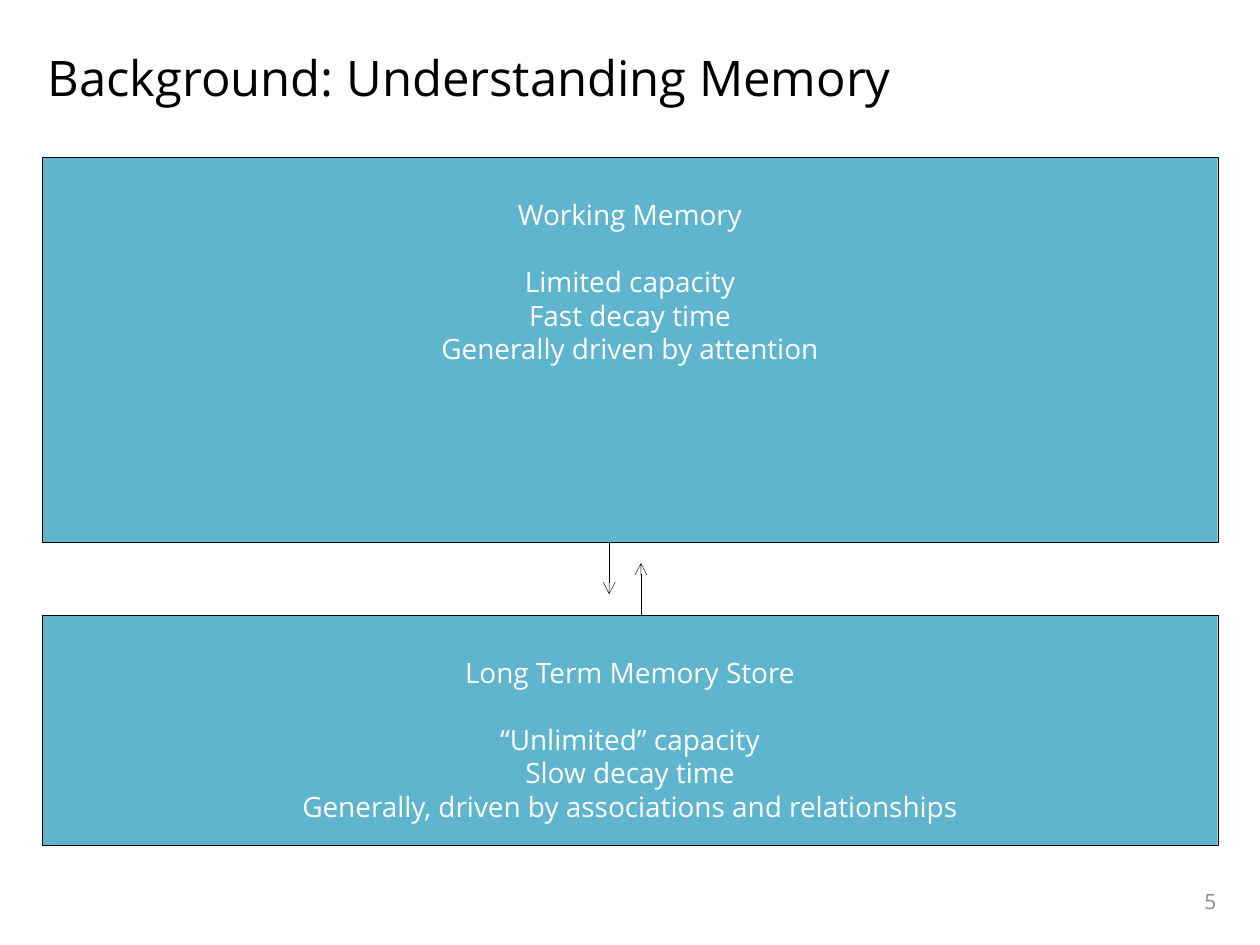
"""Build the slide on working memory and the long term memory store."""
import lxml.etree
import pptx
import pptx.dml.color
import pptx.enum.shapes
import pptx.enum.text
import pptx.oxml.ns
import pptx.util

Cm = pptx.util.Cm
Pt = pptx.util.Pt
ALIGN = pptx.enum.text.PP_ALIGN
ANCHOR = pptx.enum.text.MSO_ANCHOR
FONT = "Open Sans"
LINE_HEIGHT = 19.15
COLOURS = {"ink": "000000", "store": "5FB5CD", "label": "FFFFFF", "number": "8C8C8C"}


def colour(name):
    """Return the named colour."""
    return pptx.dml.color.RGBColor.from_string(COLOURS[name])


def add_span(para, text, size, ink, align):
    """Add one formatted run to a paragraph."""
    para.alignment = align
    span = para.add_run()
    span.text = text
    span.font.name = FONT
    span.font.size = Pt(size)
    span.font.color.rgb = colour(ink)


def add_text(page, box, text, size, ink, align, anchor):
    """Place a single line of text in the given box."""
    frame = page.shapes.add_textbox(*map(Cm, box)).text_frame
    frame.word_wrap = True
    frame.vertical_anchor = anchor
    add_span(frame.paragraphs[0], text, size, ink, align)


def add_store(page, box, heading, traits):
    """Draw a memory store with its heading and traits."""
    store = page.shapes.add_shape(
        pptx.enum.shapes.MSO_SHAPE.RECTANGLE, *map(Cm, box))
    store.shadow.inherit = False
    store.fill.solid()
    store.fill.fore_color.rgb = colour("store")
    store.line.color.rgb = colour("ink")
    store.line.width = Pt(0.25)
    frame = store.text_frame
    frame.word_wrap = True
    frame.vertical_anchor = ANCHOR.TOP
    frame.margin_top = Cm(0.13) + Pt(LINE_HEIGHT)
    for index, text in enumerate([heading, *traits]):
        para = frame.paragraphs[0] if index == 0 else frame.add_paragraph()
        if index == 1:
            para.space_before = Pt(LINE_HEIGHT)
        add_span(para, text, 16, "label", ALIGN.CENTER)


def add_arrow(page, start, end):
    """Draw a thin line with an open arrowhead at its end."""
    arrow = page.shapes.add_connector(
        pptx.enum.shapes.MSO_CONNECTOR.STRAIGHT, *map(Cm, start + end))
    arrow.line.color.rgb = colour("ink")
    arrow.line.width = Pt(0.25)
    qn = pptx.oxml.ns.qn
    outline = arrow.line._get_or_add_ln()
    lxml.etree.SubElement(outline, qn("a:tailEnd"), type="arrow")
    lxml.etree.SubElement(arrow._element.spPr, qn("a:effectLst"))


def add_exchange(page, box):
    """Draw the arrows passing down and up between the stores."""
    left, top, width, height = box
    bottom = top + height
    reach = 1.05
    add_arrow(page, (left, top), (left, top + reach))
    add_arrow(page, (left + width, bottom), (left + width, bottom - reach))


def main():
    """Build and save the deck."""
    deck = pptx.Presentation()
    deck.slide_width, deck.slide_height = Cm(25.4), Cm(19.05)
    page = deck.slides.add_slide(deck.slide_layouts[6])
    left, width = 0.85, 23.7
    upper_top, upper_height = 3.18, 7.75
    lower_top, lower_height = 12.4, 4.65
    upper_bottom = upper_top + upper_height
    add_text(page, (0.71, 0.84, 24.05, 2.74), "Background: Understanding Memory",
             28, "ink", ALIGN.LEFT, ANCHOR.TOP)
    add_text(page, (18.85, 17.65, 5.92, 1.02), "5",
             12, "number", ALIGN.RIGHT, ANCHOR.MIDDLE)
    add_store(page, (left, lower_top, width, lower_height),
              "Long Term Memory Store",
              ["“Unlimited” capacity", "Slow decay time",
               "Generally, driven by associations and relationships"])
    add_store(page, (left, upper_top, width, upper_height),
              "Working Memory",
              ["Limited capacity", "Fast decay time",
               "Generally driven by attention"])
    add_exchange(page, (12.28, upper_bottom, 0.64, lower_top - upper_bottom))
    deck.save("out.pptx")


if __name__ == "__main__":
    main()
